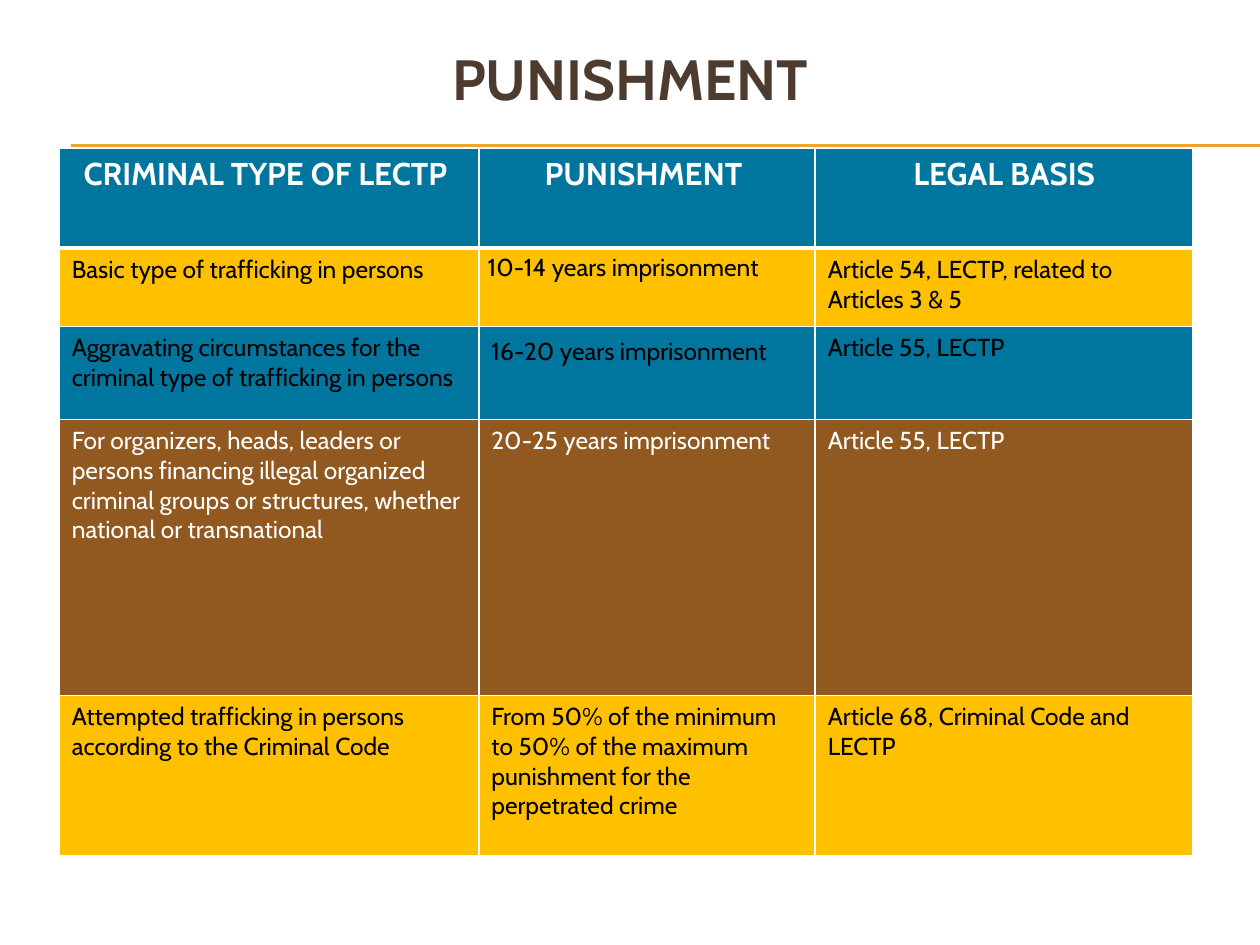
import pptx
import pptx.dml.color
import pptx.enum.shapes
import pptx.enum.text
import pptx.oxml
import pptx.oxml.ns
import pptx.util
from lxml import etree

Inches = pptx.util.Inches
Pt = pptx.util.Pt
CENTER = pptx.enum.text.PP_ALIGN.CENTER
MIDDLE = pptx.enum.text.MSO_ANCHOR.MIDDLE

BROWN, ORANGE, WHITE, BLACK = "4E3B30", "F0A22E", "FFFFFF", "000000"
BLUE, YELLOW, RUST = "00759E", "FFC000", "91581F"

COLUMNS = [3.33, 2.67, 3]
HEADERS = ["CRIMINAL TYPE OF LECTP ", "PUNISHMENT ", "LEGAL BASIS"]
ROWS = [
    (0.79, BLUE, WHITE, HEADERS),
    (0.62, YELLOW, BLACK, [
        "Basic type of trafficking in persons",
        "10-14 years imprisonment",
        "Article 54, LECTP, related to Articles 3 & 5"]),
    (0.74, BLUE, BLACK, [
        "Aggravating circumstances for the criminal type of trafficking in persons",
        "16-20 years imprisonment",
        "Article 55, LECTP"]),
    (2.19, RUST, WHITE, [
        "For organizers, heads, leaders or persons financing illegal organized "
        "criminal groups or structures, whether national or transnational",
        "20-25 years imprisonment",
        "Article 55, LECTP"]),
    (1.27, YELLOW, BLACK, [
        "Attempted trafficking in persons according to the Criminal Code",
        "From 50% of the minimum to 50% of the maximum punishment "
        "for the perpetrated crime",
        "Article 68, Criminal Code and LECTP"]),
]
LOOSE_CELLS = [(1, 1), (2, 1)]
TIGHT_CELL = (1, 1)


def rgb(color):
    return pptx.dml.color.RGBColor.from_string(color)


class SlideBuilder:
    """Holds the font and the current slide, and adds each kind of element."""

    def __init__(self, prs, font):
        self.font = font
        self.s = prs.slides.add_slide(prs.slide_layouts[5])

    def run(self, p, text, size, color, bold=False):
        r = p.add_run()
        r.text = text
        r.font.name = self.font
        r.font.size = Pt(size)
        r.font.bold = bold
        r.font.color.rgb = rgb(color)

    def title(self, text, x, y, w, h):
        sp = self.s.shapes.title
        sp.left, sp.top, sp.width, sp.height = map(Inches, (x, y, w, h))
        tf = sp.text_frame
        tf.word_wrap = True
        tf.vertical_anchor = MIDDLE
        tf.paragraphs[0].alignment = CENTER
        self.run(tf.paragraphs[0], text, 32.4, BROWN, True)

    def line(self, x1, x2, y):
        cx = self.s.shapes.add_connector(
            pptx.enum.shapes.MSO_CONNECTOR.STRAIGHT,
            Inches(x1), Inches(y), Inches(x2), Inches(y))
        cx.line.color.rgb = rgb(ORANGE)
        cx.line.width = Pt(0.75)
        etree.SubElement(cx._element.spPr, pptx.oxml.ns.qn("a:effectLst"))

    def borders(self, cell, **widths):
        tc_pr = cell._tc.get_or_add_tcPr()
        for side, width in widths.items():
            tc_pr.append(pptx.oxml.parse_xml(
                f'<a:ln{side} {pptx.oxml.ns.nsdecls("a")} w="{Pt(width)}">'
                f'<a:solidFill><a:srgbClr val="{WHITE}"/></a:solidFill></a:ln{side}>'))

    def table(self, x, y, columns, rows):
        frame = self.s.shapes.add_table(
            len(rows), len(columns), Inches(x), Inches(y),
            Inches(sum(columns)), Inches(sum(row[0] for row in rows)))
        table = frame.table
        for column, width in zip(table.columns, columns):
            column.width = Inches(width)
        for i, (height, fill, color, texts) in enumerate(rows):
            table.rows[i].height = Inches(height)
            for j, text in enumerate(texts):
                cell = table.cell(i, j)
                self.borders(cell, L=1, R=1, T=3 if i == 1 else 1, B=3 if i == 0 else 1)
                cell.fill.solid()
                cell.fill.fore_color.rgb = rgb(fill)
                tight = (i, j) == TIGHT_CELL
                cell.margin_left = cell.margin_right = Inches(0.07 if tight else 0.1)
                cell.margin_top = cell.margin_bottom = Inches(0 if tight else 0.05)
                p = cell.text_frame.paragraphs[0]
                if i == 0:
                    p.alignment = CENTER
                if (i, j) in LOOSE_CELLS:
                    p.line_spacing = 1.15
                self.run(p, text, 18 if i == 0 else 14, color, i == 0)


def main():
    prs = pptx.Presentation()
    prs.slide_width = Inches(10)
    prs.slide_height = Inches(7.5)
    builder = SlideBuilder(prs, "Cabin")
    for y in (1.15, 1.16):
        builder.line(0.56, 10, y)
    builder.title("PUNISHMENT", 0.5, 0.3, 9, 0.64)
    builder.table(0.47, 1.18, COLUMNS, ROWS)
    prs.save("out.pptx")


if __name__ == "__main__":
    main()
